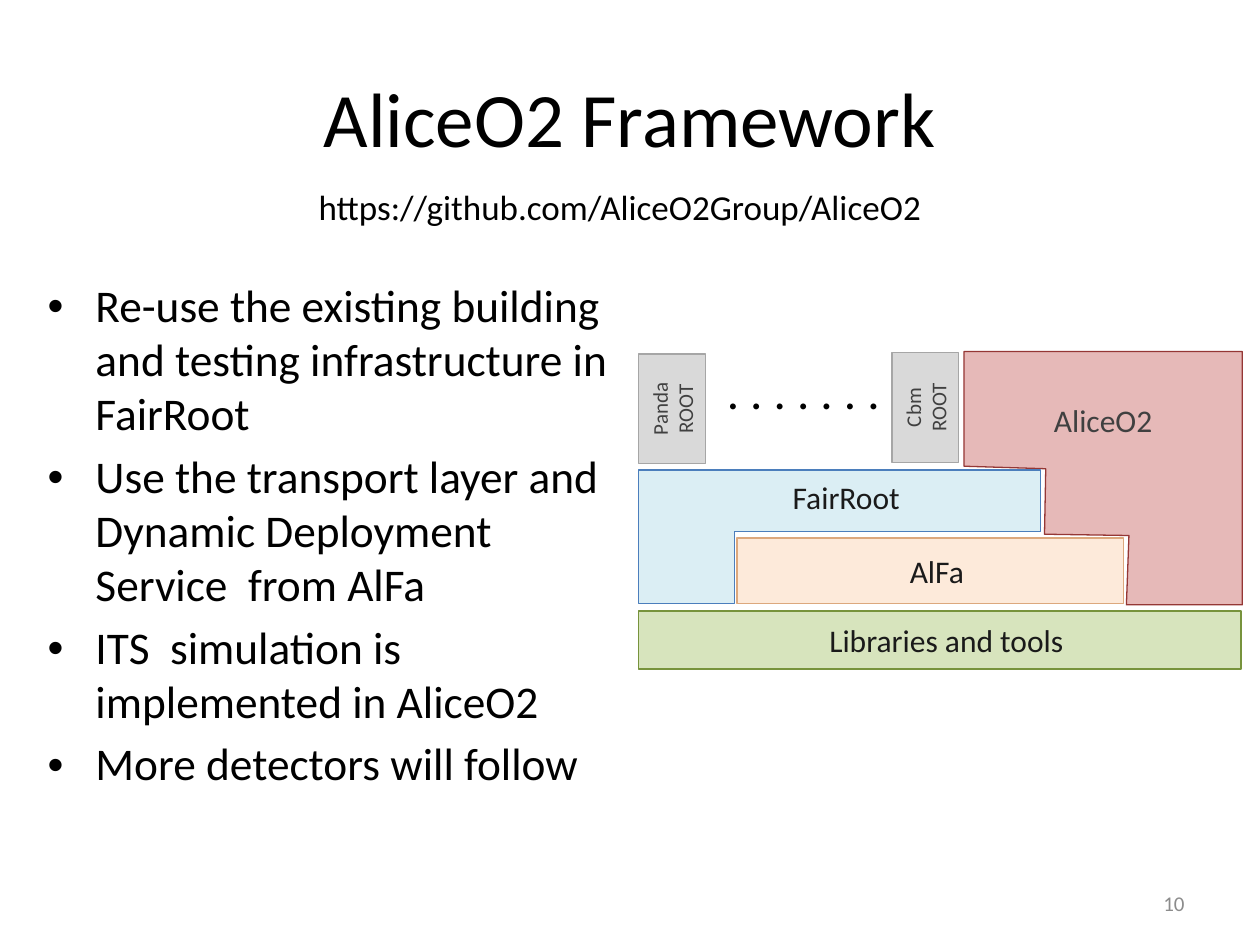
import pptx
import pptx.dml.color
import pptx.enum.shapes
import pptx.enum.text
import pptx.util
from lxml import etree
from pptx.oxml.ns import qn

Inches = pptx.util.Inches
Pt = pptx.util.Pt
ALIGN = pptx.enum.text.PP_ALIGN
ANCHOR = pptx.enum.text.MSO_ANCHOR


def rgb(value):
    return pptx.dml.color.RGBColor.from_string(value)


class Deck:
    font = "Calibri"
    label_insets = (0.2, 0.04, 0.1, 0.04)

    def __init__(self, width, height):
        self.prs = pptx.Presentation()
        self.prs.slide_width = Inches(width)
        self.prs.slide_height = Inches(height)
        self.s = self.prs.slides.add_slide(self.prs.slide_layouts[6])

    def frame(self, sp, anchor, insets=(0.1, 0.05, 0.1, 0.05)):
        tf = sp.text_frame
        tf.word_wrap = True
        tf.vertical_anchor = anchor
        tf.margin_left, tf.margin_top, tf.margin_right, tf.margin_bottom = map(Inches, insets)
        return tf

    def add_runs(self, p, text, size, color, align):
        p.alignment = align
        for i, line in enumerate(text.split("\n")):
            if i:
                p.add_line_break()
            r = p.add_run()
            r.text = line
            r.font.name = self.font
            r.font.size = Pt(size)
            r.font.color.rgb = rgb(color)

    def text(self, box, text, size, color="000000", align=ALIGN.LEFT, anchor=ANCHOR.TOP):
        sp = self.s.shapes.add_textbox(*map(Inches, box))
        self.add_runs(self.frame(sp, anchor).paragraphs[0], text, size, color, align)

    def bullets(self, box, items, size, indent):
        sp = self.s.shapes.add_textbox(*map(Inches, box))
        tf = self.frame(sp, ANCHOR.TOP)
        for i, item in enumerate(items):
            p = tf.add_paragraph() if i else tf.paragraphs[0]
            p.line_spacing = 0.99
            p.space_before = Pt(0.2 * size if i else 0)
            pPr = p._p.get_or_add_pPr()
            pPr.set("marL", str(Inches(indent)))
            pPr.set("indent", str(-Inches(indent)))
            etree.SubElement(pPr, qn("a:buFont")).set("typeface", "Arial")
            etree.SubElement(pPr, qn("a:buChar")).set("char", "•")
            self.add_runs(p, item, size, "000000", ALIGN.LEFT)

    def style(self, sp, fill, line, text, size, color, insets):
        sp.shadow.inherit = False
        sp.fill.solid()
        sp.fill.fore_color.rgb = rgb(fill)
        sp.line.color.rgb = rgb(line)
        sp.line.width = Pt(0.75)
        tf = self.frame(sp, ANCHOR.MIDDLE, insets)
        self.add_runs(tf.paragraphs[0], text, size, color, ALIGN.CENTER)
        return tf

    def block(self, box, fill, line, text, size=18, color="1A1A1A", insets=label_insets, vert=None):
        kind = pptx.enum.shapes.MSO_SHAPE.RECTANGLE
        sp = self.s.shapes.add_shape(kind, *map(Inches, box))
        tf = self.style(sp, fill, line, text, size, color, insets)
        if vert:
            tf._txBody.bodyPr.set("vert", vert)

    def outline(self, points, fill, line, text, color, insets):
        pts = [(Inches(x), Inches(y)) for x, y in points]
        fb = self.s.shapes.build_freeform(*pts[0], scale=1.0)
        fb.add_line_segments(pts[1:], close=True)
        self.style(fb.convert_to_shape(), fill, line, text, 18, color, insets)


def main():
    d = Deck(10, 7.5)

    # Title and repository address
    d.text((0.5, 0.3, 9, 1.25), "AliceO2 Framework", 44, align=ALIGN.CENTER, anchor=ANCHOR.MIDDLE)
    d.text((1.67, 1.42, 6.5, 0.44), "https://github.com/AliceO2Group/AliceO2", 20, align=ALIGN.CENTER)

    # Key points
    d.bullets((0.28, 2.17, 4.64, 4.78), [
        "Re-use the existing building and testing infrastructure in FairRoot",
        "Use the transport layer and Dynamic Deployment Service  from AlFa",
        "ITS  simulation is implemented in AliceO2",
        "More detectors will follow",
    ], 25.9, 0.38)

    # Base layers
    d.block((5.07, 4.85, 4.78, 0.46), "D7E4BD", "77933C", "Libraries and tools")
    d.block((5.85, 4.27, 3.07, 0.52), "FDEADA", "DCA87D", "AlFa")

    # Experiment frameworks, with dots between them
    for x, y, name in ((5.07, 2.81, "Panda"), (7.08, 2.8, "Cbm")):
        d.block((x, y, 0.53, 0.87), "D9D9D9", "A6A6A6", name + "\nROOT", 12, "404040",
                (0.1, 0.05, 0.1, 0.05), "vert270")
    d.text((5.67, 2.81, 1.56, 0.57), ". . . . . . .", 28)

    # Stepped blocks; the deep bottom inset lifts the label into the wide part
    d.outline([(7.65, 2.79), (9.86, 2.79), (9.86, 4.8), (8.94, 4.8), (8.96, 4.25),
               (8.29, 4.24), (8.3, 3.72), (7.65, 3.7)],
              "E6B9B8", "953735", "AliceO2", "404040", (0.1, 0.05, 0.1, 0.98))
    d.outline([(8.26, 3.73), (5.07, 3.73), (5.07, 4.79), (5.83, 4.79), (5.83, 4.22), (8.26, 4.22)],
              "DBEEF4", "4B7EBC", "FairRoot", "1A1A1A", (0.2, 0.04, 0.1, 0.67))

    # Slide number
    d.text((7.17, 6.92, 2.33, 0.5), "10", 12, "8C8C8C", ALIGN.RIGHT, ANCHOR.MIDDLE)

    d.prs.save("out.pptx")


if __name__ == "__main__":
    main()
